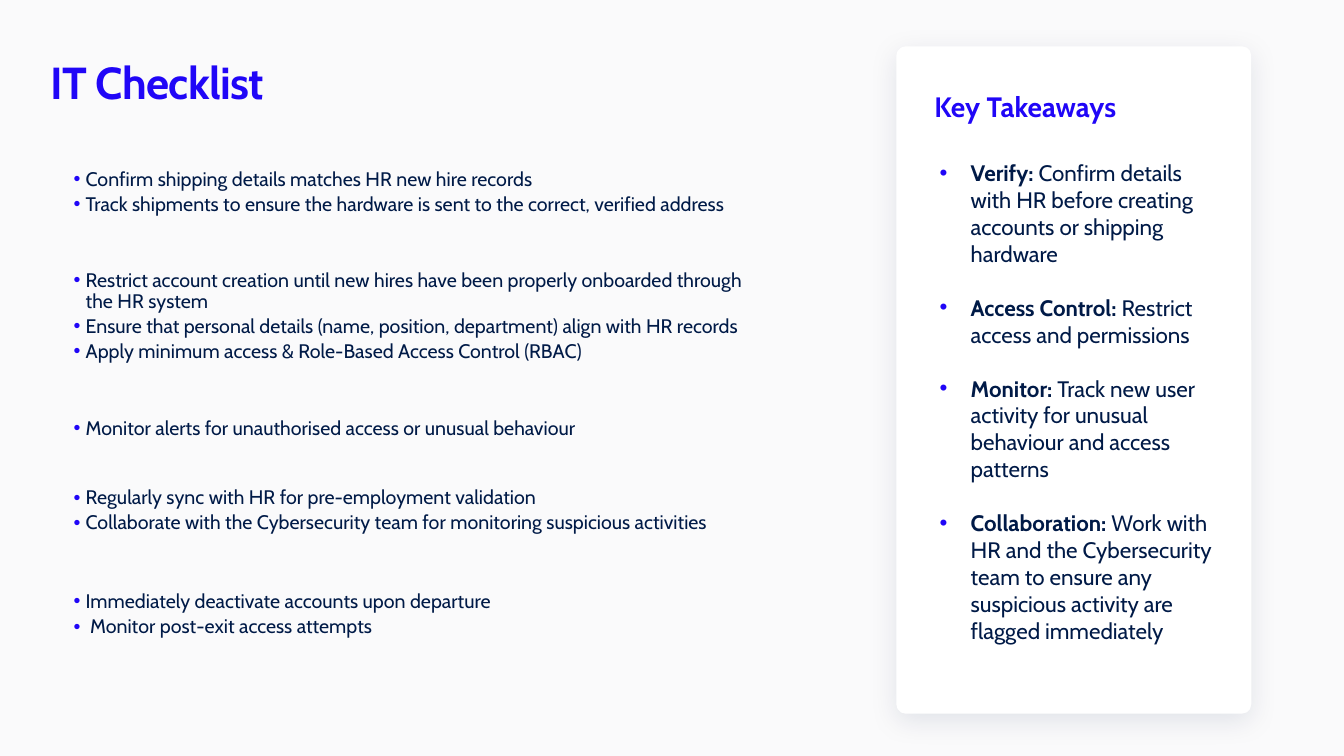
import pptx
import pptx.dml.color
import pptx.enum.shapes
import pptx.enum.text
import pptx.oxml
import pptx.oxml.ns
import pptx.util
from pptx.util import Inches

BLUE = "2006F7"
NAVY = "001A47"
WHITE = "FFFFFF"
BACKGROUND = "FAFAFB"

CHECKLISTS = [
    (1.66, 0.52, [
        "Confirm shipping details matches HR new hire records",
        "Track shipments to ensure the hardware is sent to the correct, verified address",
    ]),
    (2.66, 1, [
        "Restrict account creation until new hires have been properly onboarded "
        "through the HR system",
        "Ensure that personal details (name, position, department) align with HR records",
        "Apply minimum access & Role-Based Access Control (RBAC)",
    ]),
    (4.13, 0.38, [
        "Monitor alerts for unauthorised access or unusual behaviour",
    ]),
    (4.82, 0.52, [
        "Regularly sync with HR for pre-employment validation",
        "Collaborate with the Cybersecurity team for monitoring suspicious activities",
    ]),
    (5.85, 0.52, [
        "Immediately deactivate accounts upon departure",
        " Monitor post-exit access attempts",
    ]),
]

TAKEAWAYS = [
    ("Verify:", " Confirm details with HR before creating accounts or shipping hardware"),
    ("Access Control:", " Restrict access and permissions"),
    ("Monitor:", " Track new user activity for unusual behaviour and access patterns"),
    ("Collaboration:", " Work with HR and the Cybersecurity team to ensure any suspicious "
                       "activity are flagged immediately"),
]


def color(hex_value):
    """Turn a hex string into a colour."""
    return pptx.dml.color.RGBColor.from_string(hex_value)


def add_text(paragraph, text, size=14, fill=NAVY, bold=False, spacing=None):
    """Append formatted text to a paragraph."""
    run = paragraph.add_run()
    run.text = text
    run.font.name = "Cabin"
    run.font.size = pptx.util.Pt(size)
    run.font.bold = bold
    run.font.color.rgb = color(fill)
    if spacing is not None:
        run.font._element.set("spc", str(round(spacing * 100)))


def set_frame(frame, insets, anchor="TOP"):
    """Set wrapping, insets and vertical anchor of a text frame."""
    frame.word_wrap = True
    frame.vertical_anchor = pptx.enum.text.MSO_ANCHOR[anchor]
    (frame.margin_left, frame.margin_top,
     frame.margin_right, frame.margin_bottom) = map(Inches, insets)


def add_box(slide, bounds, insets=(0.1, 0.05, 0.1, 0.05)):
    """Add a wrapping text box and return its frame."""
    frame = slide.shapes.add_textbox(*map(Inches, bounds)).text_frame
    set_frame(frame, insets)
    return frame


def add_bullet(frame, index, indent, after):
    """Return the paragraph at index with a blue bullet and hanging indent."""
    paragraph = frame.add_paragraph() if index else frame.paragraphs[0]
    paragraph.space_after = pptx.util.Pt(after)
    properties = paragraph._p.get_or_add_pPr()
    properties.set("marL", str(Inches(indent)))
    properties.set("indent", str(-Inches(indent)))
    namespace = pptx.oxml.ns.nsdecls("a")
    for bullet_part in (
        f'<a:buClr {namespace}><a:srgbClr val="{BLUE}"/></a:buClr>',
        f'<a:buFont {namespace} typeface="Arial"/>',
        f'<a:buChar {namespace} char="•"/>',
    ):
        properties.append(pptx.oxml.parse_xml(bullet_part))
    return paragraph


def add_title(slide, text):
    """Place and format the slide title."""
    title = slide.shapes.title
    title.left, title.top, title.width, title.height = map(Inches, (0.5, 0.5, 7.7, 0.62))
    set_frame(title.text_frame, (0, 0, 0, 0), "MIDDLE")
    heading = title.text_frame.paragraphs[0]
    heading.alignment = pptx.enum.text.PP_ALIGN.LEFT
    add_text(heading, text, size=32, fill=BLUE, bold=True, spacing=-0.5)


def add_card(slide, bounds):
    """Add the white rounded card with its soft shadow."""
    card = slide.shapes.add_shape(
        pptx.enum.shapes.MSO_SHAPE.ROUNDED_RECTANGLE, *map(Inches, bounds))
    card.adjustments[0] = 0.026
    card.fill.solid()
    card.fill.fore_color.rgb = color(WHITE)
    card.line.fill.background()
    card.shadow.inherit = False
    effects = card._element.spPr.find(pptx.oxml.ns.qn("a:effectLst"))
    effects.append(pptx.oxml.parse_xml(
        f'<a:outerShdw {pptx.oxml.ns.nsdecls("a")} blurRad="{pptx.util.Pt(20)}" '
        f'dist="{pptx.util.Pt(5)}" dir="5400000" algn="t" rotWithShape="0">'
        f'<a:srgbClr val="{NAVY}"><a:alpha val="10000"/></a:srgbClr></a:outerShdw>'))


def add_checklist(slide, top, height, items):
    """Add one group of bulleted checklist items."""
    checklist = add_box(slide, (0.5, top, 7.17, height), (0.23, 0.02, 0.11, 0.02))
    for index, item in enumerate(items):
        paragraph = add_bullet(checklist, index, indent=0.12, after=2.8)
        paragraph.level = 1
        paragraph.line_spacing = 0.9
        add_text(paragraph, item)


def add_takeaways(slide):
    """Add the card with the key takeaways."""
    add_card(slide, (8.89, 0.46, 3.52, 6.62))
    takeaways = add_box(slide, (9.22, 1.53, 2.96, 4.95))
    takeaways.auto_size = pptx.enum.text.MSO_AUTO_SIZE.SHAPE_TO_FIT_TEXT
    for index, (topic, advice) in enumerate(TAKEAWAYS):
        is_last = index == len(TAKEAWAYS) - 1
        paragraph = add_bullet(takeaways, index, indent=0.31, after=0 if is_last else 19.4)
        add_text(paragraph, topic, size=16, bold=True)
        add_text(paragraph, advice, size=16)
    heading = add_box(slide, (9.17, 0.84, 2.96, 0.44))
    heading.auto_size = pptx.enum.text.MSO_AUTO_SIZE.SHAPE_TO_FIT_TEXT
    add_text(heading.paragraphs[0], "Key Takeaways", size=20, fill=BLUE, bold=True)


def main():
    """Build the checklist slide and save it."""
    deck = pptx.Presentation()
    deck.slide_width, deck.slide_height = Inches(13.33), Inches(7.5)
    slide = deck.slides.add_slide(deck.slide_layouts.get_by_name("Title Only"))
    slide.background.fill.solid()
    slide.background.fill.fore_color.rgb = color(BACKGROUND)
    add_title(slide, "IT Checklist")
    add_takeaways(slide)
    for checklist in CHECKLISTS:
        add_checklist(slide, *checklist)
    deck.save("out.pptx")


if __name__ == "__main__":
    main()
